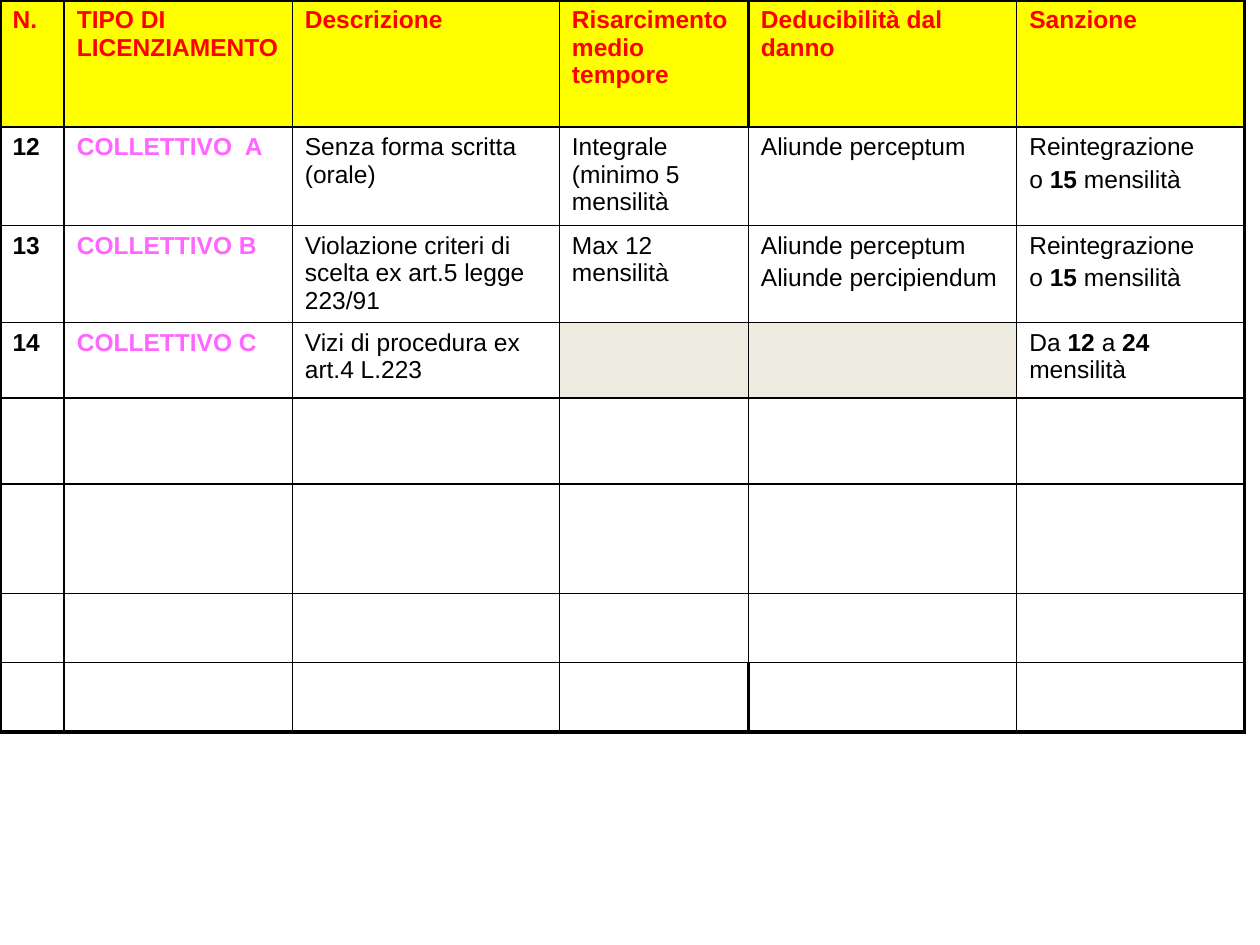
from pptx import Presentation
from pptx.dml.color import RGBColor
from pptx.oxml import parse_xml
from pptx.oxml.ns import nsdecls
from pptx.util import Inches, Pt

BLACK = RGBColor(0x00, 0x00, 0x00)
RED = RGBColor(0xFF, 0x00, 0x00)
YELLOW = RGBColor(0xFF, 0xFF, 0x00)
PINK = RGBColor(0xFF, 0x66, 0xFF)
BEIGE = RGBColor(0xEE, 0xEC, 0xE1)

THIN, THICK = 1, 2.25
COLUMN_WIDTHS = [0.51, 1.81, 2.12, 1.5, 2.13, 1.81]
ROW_HEIGHTS = [1.01, 0.78, 0.77, 0.6, 0.68, 0.87, 0.55, 0.55]
HEADINGS = ["N.", "TIPO DI LICENZIAMENTO", "Descrizione",
            "Risarcimento medio tempore", "Deducibilità dal danno", "Sanzione"]
DISMISSALS = [
    ["12", "COLLETTIVO  A", "Senza forma scritta (orale)",
     "Integrale (minimo 5 mensilità", "Aliunde perceptum",
     "Reintegrazione\no *15 *mensilità"],
    ["13", "COLLETTIVO B", "Violazione criteri di scelta ex art.5 legge 223/91",
     "Max 12 mensilità", "Aliunde perceptum\nAliunde percipiendum",
     "Reintegrazione\no *15* mensilità"],
    ["14", "COLLETTIVO C", "Vizi di procedura ex art.4 L.223",
     "", "", "Da *12 *a *24 *mensilità"],
]
NUMBER, KIND, COMPENSATION, DEDUCTION = 0, 1, 3, 4
LAST_ROW, LAST_COLUMN = len(ROW_HEIGHTS) - 1, len(COLUMN_WIDTHS) - 1


def write(frame, text, color=BLACK, bold=False, size=14, font="Arial"):
    for line_index, line in enumerate(text.split("\n")):
        paragraph = frame.paragraphs[0] if line_index == 0 else frame.add_paragraph()
        paragraph.space_before = Pt(size * 0.2)
        for part_index, part in enumerate(line.split("*")):
            run = paragraph.add_run()
            run.text = part
            run.font.name = font
            run.font.size = Pt(size)
            run.font.bold = bold or part_index % 2 == 1
            run.font.color.rgb = color


def border_widths(row, column):
    split = row in (0, LAST_ROW)
    return {
        "L": THICK if column == 0 or split and column == DEDUCTION else THIN,
        "R": THICK if column == LAST_COLUMN or split and column == COMPENSATION else THIN,
        "T": THICK if row == 0 else THIN,
        "B": THICK if row == LAST_ROW else THIN,
    }


class SlideBuilder:
    def __init__(self, slide, border_color=BLACK):
        self.slide = slide
        self.border_color = border_color

    def table(self, left, top, widths, heights):
        table = self.slide.shapes.add_table(
            len(heights), len(widths), Inches(left), Inches(top),
            Inches(sum(widths)), Inches(sum(heights))).table
        table.first_row = table.horz_banding = False
        for column, width in zip(table.columns, widths):
            column.width = Inches(width)
        for row, height in zip(table.rows, heights):
            row.height = Inches(height)
        return table

    def cell(self, cell, borders, fill=None):
        properties = cell._tc.get_or_add_tcPr()
        for side, width in borders.items():
            properties.append(parse_xml(
                f'<a:ln{side} {nsdecls("a")} w="{Pt(width)}"><a:solidFill>'
                f'<a:srgbClr val="{self.border_color}"/></a:solidFill></a:ln{side}>'))
        if fill is None:
            cell.fill.background()
        else:
            cell.fill.solid()
            cell.fill.fore_color.rgb = fill


def main():
    presentation = Presentation()
    presentation.slide_width = Inches(10)
    presentation.slide_height = Inches(7.5)
    builder = SlideBuilder(presentation.slides.add_slide(presentation.slide_layouts[6]))
    dismissal_table = builder.table(0, 0, COLUMN_WIDTHS, ROW_HEIGHTS)

    for row in range(len(ROW_HEIGHTS)):
        for column in range(len(COLUMN_WIDTHS)):
            fill = YELLOW if row == 0 else None
            if row == len(DISMISSALS) and column in (COMPENSATION, DEDUCTION):
                fill = BEIGE
            builder.cell(dismissal_table.cell(row, column),
                         border_widths(row, column), fill)

    for row, texts in enumerate([HEADINGS] + DISMISSALS):
        for column, text in enumerate(texts):
            if not text:
                continue
            color = RED if row == 0 else PINK if column == KIND else BLACK
            write(dismissal_table.cell(row, column).text_frame, text, color=color,
                  bold=row == 0 or column in (NUMBER, KIND))

    presentation.save("out.pptx")


if __name__ == "__main__":
    main()
